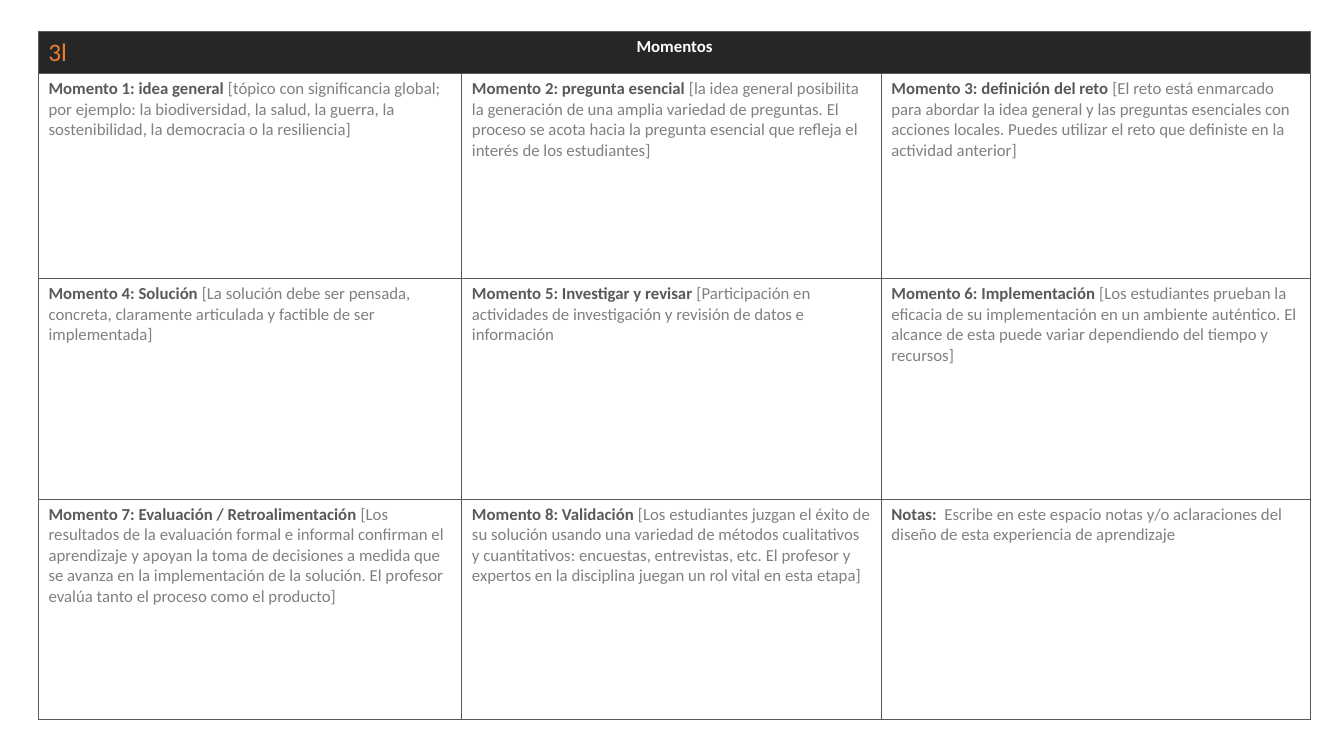
import dataclasses

import lxml.etree
import pptx
import pptx.dml.color
import pptx.enum.text
import pptx.oxml.ns
import pptx.util

Cm = pptx.util.Cm
Pt = pptx.util.Pt


@dataclasses.dataclass(frozen=True)
class Theme:
    """Colours, font and type sizes of the slide."""

    font: str = "Calibri"
    header: str = "262626"
    white: str = "FFFFFF"
    strong: str = "595959"
    muted: str = "808080"
    border: str = "595959"
    accent: str = "ED7D31"
    body_size: int = 12
    tag_size: int = 18
    border_width: int = 1


class Planner:
    """Draws the planning table and its tag on one slide."""

    def __init__(self, s, theme):
        """Keep the slide and its theme."""
        self.s = s
        self.theme = theme

    def colour(self, value):
        """Turn a hex string into a colour."""
        return pptx.dml.color.RGBColor.from_string(value)

    def style(self, p, size):
        """Set the shared font of a paragraph."""
        p.font.name = self.theme.font
        p.font.size = Pt(size)

    def run(self, p, text, colour, bold=False):
        """Add a coloured run to a paragraph."""
        r = p.add_run()
        r.text = text
        r.font.bold = bold
        r.font.color.rgb = self.colour(colour)

    def outline(self, cell):
        """Draw the four borders of a cell."""
        qn = pptx.oxml.ns.qn
        tc_pr = cell._tc.get_or_add_tcPr()
        for side in ("a:lnL", "a:lnR", "a:lnT", "a:lnB"):
            ln = lxml.etree.SubElement(
                tc_pr, qn(side), w=str(Pt(self.theme.border_width))
            )
            fill = lxml.etree.SubElement(ln, qn("a:solidFill"))
            lxml.etree.SubElement(fill, qn("a:srgbClr"), val=self.theme.border)

    def table(self, left, top, widths, heights, title, moments):
        """Add a table with a merged title row and a grid of moments."""
        t = self.theme
        table = self.s.shapes.add_table(
            len(heights), len(widths), Cm(left), Cm(top),
            Cm(sum(widths)), Cm(sum(heights)),
        ).table
        table.first_row = table.horz_banding = False
        for column, width in zip(table.columns, widths):
            column.width = Cm(width)
        for row, height in zip(table.rows, heights):
            row.height = Cm(height)
        for cell in table.iter_cells():
            self.outline(cell)
            cell.fill.background()

        head = table.cell(0, 0)
        head.merge(table.cell(0, len(widths) - 1))
        head.fill.solid()
        head.fill.fore_color.rgb = self.colour(t.header)
        p = head.text_frame.paragraphs[0]
        p.alignment = pptx.enum.text.PP_ALIGN.CENTER
        self.style(p, t.body_size)
        self.run(p, title, t.white, True)

        for i, (name, guide) in enumerate(moments):
            row, column = divmod(i, len(widths))
            p = table.cell(row + 1, column).text_frame.paragraphs[0]
            self.style(p, t.body_size)
            self.run(p, name, t.strong, True)
            self.run(p, guide, t.muted)

    def tag(self, left, top, width, height, text):
        """Add a short unwrapped label."""
        tf = self.s.shapes.add_textbox(
            Cm(left), Cm(top), Cm(width), Cm(height)
        ).text_frame
        tf.word_wrap = False
        tf.auto_size = pptx.enum.text.MSO_AUTO_SIZE.SHAPE_TO_FIT_TEXT
        p = tf.paragraphs[0]
        self.style(p, self.theme.tag_size)
        self.run(p, text, self.theme.accent)


MOMENTS = [
    ("Momento 1: idea general ",
     "[tópico con significancia global; por ejemplo: la biodiversidad, la salud, "
     "la guerra, la sostenibilidad, la democracia o la resiliencia]"),
    ("Momento 2: pregunta esencial ",
     "[la idea general posibilita la generación de una amplia variedad de "
     "preguntas. El proceso se acota hacia la pregunta esencial que refleja el "
     "interés de los estudiantes]"),
    ("Momento 3: definición del reto ",
     "[El reto está enmarcado para abordar la idea general y las preguntas "
     "esenciales con acciones locales. Puedes utilizar el reto que definiste en "
     "la actividad anterior]"),
    ("Momento 4: Solución ",
     "[La solución debe ser pensada, concreta, claramente articulada y factible "
     "de ser implementada]"),
    ("Momento 5: Investigar y revisar ",
     "[Participación en actividades de investigación y revisión de datos e "
     "información"),
    ("Momento 6: Implementación ",
     "[Los estudiantes prueban la eficacia de su implementación en un ambiente "
     "auténtico. El alcance de esta puede variar dependiendo del tiempo y "
     "recursos]"),
    ("Momento 7: Evaluación / Retroalimentación ",
     "[Los resultados de la evaluación formal e informal confirman el "
     "aprendizaje y apoyan la toma de decisiones a medida que se avanza en la "
     "implementación de la solución. El profesor evalúa tanto el proceso como "
     "el producto]"),
    ("Momento 8: Validación ",
     "[Los estudiantes juzgan el éxito de su solución usando una variedad de "
     "métodos cualitativos y cuantitativos: encuestas, entrevistas, etc. El "
     "profesor y expertos en la disciplina juegan un rol vital en esta etapa]"),
    ("Notas:  ",
     "Escribe en este espacio notas y/o aclaraciones del diseño de esta "
     "experiencia de aprendizaje"),
]


def main():
    """Build and save the slide."""
    prs = pptx.Presentation()
    prs.slide_width, prs.slide_height = Cm(33.87), Cm(19.05)
    s = prs.slides.add_slide(prs.slide_layouts[6])
    planner = Planner(s, Theme())
    left, top = 0.97, 0.79
    planner.table(
        left, top, [10.67, 10.57, 10.82], [1.07, 5.16, 5.56, 5.56],
        "Momentos", MOMENTS,
    )
    planner.tag(left, top, 1, 1.02, "3l")
    prs.save("out.pptx")


if __name__ == "__main__":
    main()
